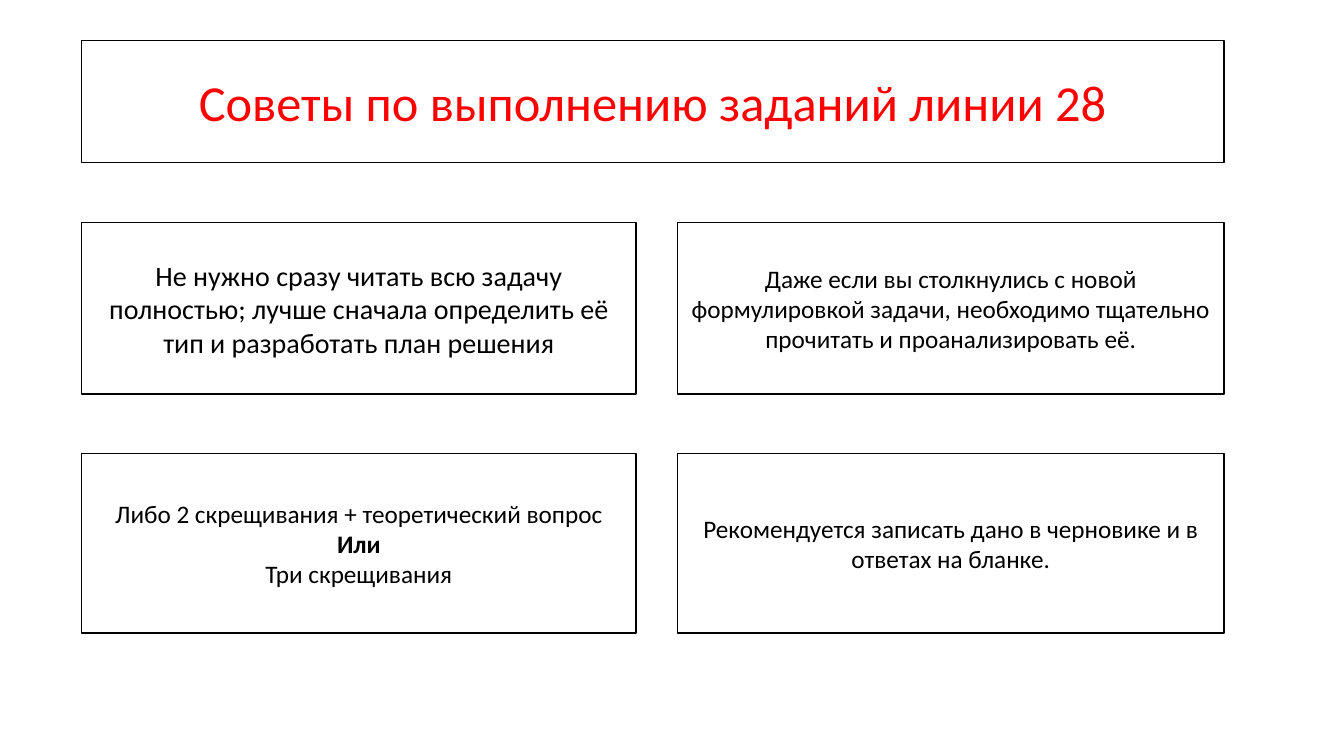
from dataclasses import dataclass

from pptx import Presentation
from pptx.dml.color import RGBColor
from pptx.enum.shapes import MSO_SHAPE
from pptx.enum.text import MSO_ANCHOR, MSO_AUTO_SIZE, PP_ALIGN
from pptx.util import Inches, Pt


@dataclass(frozen=True)
class Theme:
    font: str = "Calibri"
    paper: RGBColor = RGBColor(255, 255, 255)
    ink: RGBColor = RGBColor(0, 0, 0)
    accent: RGBColor = RGBColor(255, 0, 0)
    title_size: int = 36
    lead_size: int = 20
    text_size: int = 18
    line_width: int = 1


THEME = Theme()
LEFT, RIGHT = 0.81, 12.14
COLUMNS = ((LEFT, 5.5), (6.72, 5.42))
ROWS = ((2.21, 1.7), (4.5, 1.78))

TITLE = "Советы по выполнению заданий линии 28"
TIPS = (
    (
        (THEME.lead_size, [("Не нужно сразу читать всю задачу полностью; лучше сначала "
                            "определить её тип и разработать план решения", False)]),
        (THEME.text_size, [("Даже если вы столкнулись с новой формулировкой задачи, "
                            "необходимо тщательно прочитать и проанализировать её.", False)]),
    ),
    (
        (THEME.text_size, [("Либо 2 скрещивания + теоретический вопрос", False),
                           ("Или", True),
                           ("Три скрещивания", False)]),
        (THEME.text_size, [("Рекомендуется записать дано в черновике и в ответах "
                            "на бланке.", False)]),
    ),
)


def style_box(sp):
    sp.fill.solid()
    sp.fill.fore_color.rgb = THEME.paper
    sp.line.color.rgb = THEME.ink
    sp.line.width = Pt(THEME.line_width)


def write_lines(sp, lines, size, color):
    tf = sp.text_frame
    tf.word_wrap = True
    tf.auto_size = MSO_AUTO_SIZE.NONE
    tf.vertical_anchor = MSO_ANCHOR.MIDDLE
    for i, (text, bold) in enumerate(lines):
        p = tf.add_paragraph() if i else tf.paragraphs[0]
        p.alignment = PP_ALIGN.CENTER
        r = p.add_run()
        r.text = text
        r.font.name = THEME.font
        r.font.size = Pt(size)
        r.font.bold = bold
        r.font.color.rgb = color


def add_title(s):
    sp = s.shapes.title
    sp.left, sp.top = Inches(LEFT), Inches(0.4)
    sp.width, sp.height = Inches(RIGHT - LEFT), Inches(1.21)
    style_box(sp)
    write_lines(sp, [(TITLE, False)], THEME.title_size, THEME.accent)


def add_tip(s, column, row, size, lines):
    (left, width), (top, height) = column, row
    sp = s.shapes.add_shape(MSO_SHAPE.RECTANGLE, Inches(left), Inches(top),
                            Inches(width), Inches(height))
    sp.shadow.inherit = False
    style_box(sp)
    write_lines(sp, lines, size, THEME.ink)


def main():
    prs = Presentation()
    prs.slide_width, prs.slide_height = Inches(13.33), Inches(7.5)
    s = prs.slides.add_slide(prs.slide_layouts.get_by_name("Title Only"))
    add_title(s)
    for row, tips in zip(ROWS, TIPS):
        for column, (size, lines) in zip(COLUMNS, tips):
            add_tip(s, column, row, size, lines)
    prs.save("out.pptx")


if __name__ == "__main__":
    main()
